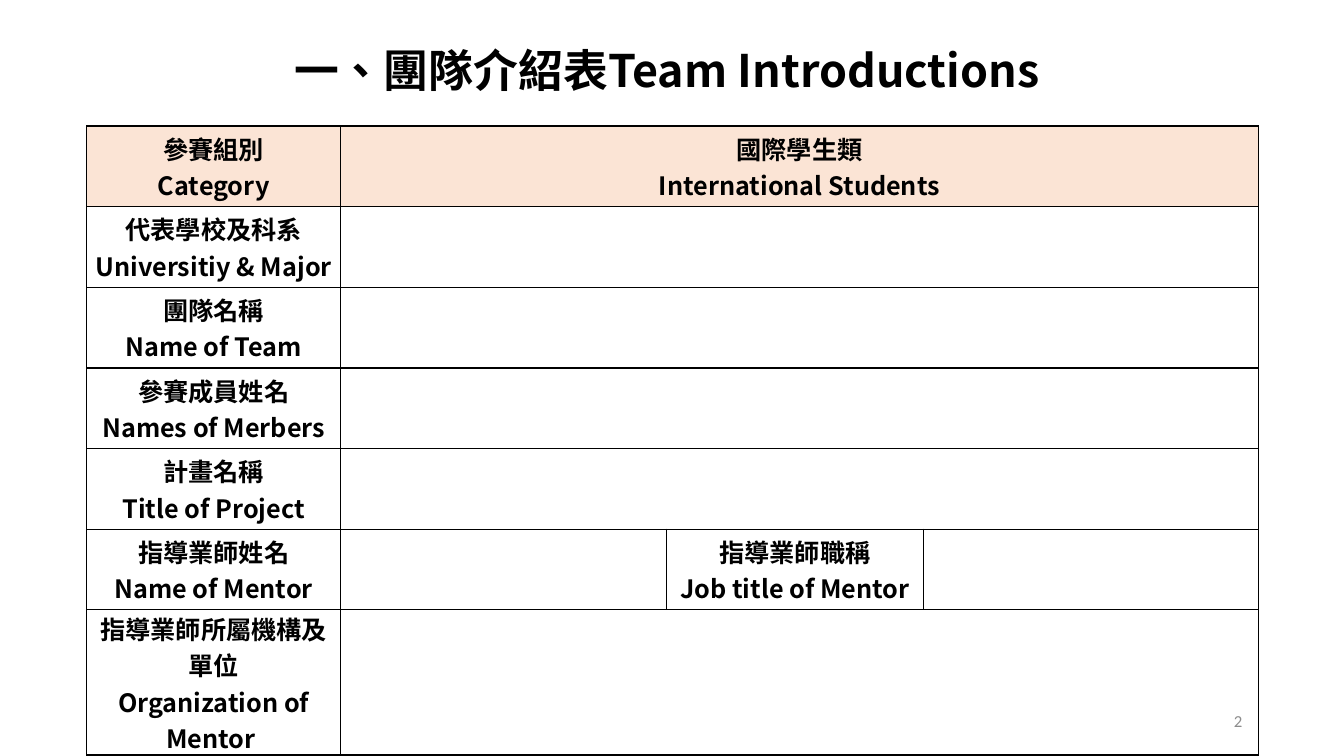
"""Build the team introduction table slide."""
from lxml import etree
from pptx import Presentation
from pptx.dml.color import RGBColor
from pptx.enum.text import MSO_ANCHOR, MSO_AUTO_SIZE, PP_ALIGN
from pptx.oxml.ns import qn
from pptx.util import Inches, Pt

CENTER, RIGHT = PP_ALIGN.CENTER, PP_ALIGN.RIGHT
MIDDLE = MSO_ANCHOR.MIDDLE
NO_AUTOFIT = MSO_AUTO_SIZE.NONE
BLACK = RGBColor(0x00, 0x00, 0x00)
GRAY = RGBColor(0x8C, 0x8C, 0x8C)
PEACH = RGBColor(0xFB, 0xE4, 0xD5)
HEADING_FONT = "Noto Sans CJK SC"
NUMBER_FONT = "Calibri"

COLUMN_WIDTHS = [2.52, 3.23, 2.55, 3.32]
ROW_HEIGHTS = [0.8] * 6 + [1.44]
MENTOR_ROW = 5
ROW_LABELS = [
    ("參賽組別", "Category"),
    ("代表學校及科系", "Universitiy & Major"),
    ("團隊名稱", "Name of Team"),
    ("參賽成員姓名", "Names of Merbers"),
    ("計畫名稱", "Title of Project"),
    ("指導業師姓名", "Name of Mentor"),
    ("指導業師所屬機構及單位", "Organization of Mentor "),
]
LABELS = {(row, 0): label for row, label in enumerate(ROW_LABELS)}
LABELS[0, 1] = ("國際學生類", "International Students")
LABELS[MENTOR_ROW, 2] = ("指導業師職稱", "Job title of Mentor")


def add_span(para, text, size, font=HEADING_FONT, color=BLACK, bold=True, align=CENTER):
    para.alignment = align
    span = para.add_run()
    span.text = text
    span.font.name = font
    span.font.size = Pt(size)
    span.font.bold = bold
    span.font.color.rgb = color
    properties = span.font._element
    properties.set("lang", "zh-TW")
    etree.SubElement(properties, qn("a:ea"), typeface=font)


def add_borders(cell):
    properties = cell._tc.get_or_add_tcPr()
    for side in ("lnL", "lnR", "lnT", "lnB"):
        line = etree.SubElement(properties, qn(f"a:{side}"), w=str(Pt(1)))
        fill = etree.SubElement(line, qn("a:solidFill"))
        etree.SubElement(fill, qn("a:srgbClr"), val=str(BLACK))


deck = Presentation()
deck.slide_width, deck.slide_height = Inches(13.33), Inches(7.5)
page = deck.slides.add_slide(deck.slide_layouts[5])

title = page.shapes.title
title.left, title.top = Inches(0.45), Inches(0)
title.width, title.height = Inches(12.43), Inches(1.84)
title_frame = title.text_frame
title_frame.auto_size = NO_AUTOFIT
title_frame.vertical_anchor = MIDDLE
title_frame.margin_bottom = Inches(0.57)
title_frame.paragraphs[0].line_spacing = 1.1
add_span(title_frame.paragraphs[0], "一、團隊介紹表Team Introductions ", 32)

number_box = page.shapes.add_textbox(Inches(9.42), Inches(6.95), Inches(3), Inches(0.4))
number_box.text_frame.word_wrap = True
number_box.text_frame.vertical_anchor = MIDDLE
add_span(number_box.text_frame.paragraphs[0], "2", 12, NUMBER_FONT, GRAY, False, RIGHT)

table = page.shapes.add_table(
    len(ROW_HEIGHTS), len(COLUMN_WIDTHS), Inches(0.86), Inches(1.25),
    Inches(sum(COLUMN_WIDTHS)), Inches(sum(ROW_HEIGHTS)),
).table
table.first_row = False
table.horz_banding = False
for column, width in zip(table.columns, COLUMN_WIDTHS):
    column.width = Inches(width)

for row_index, row in enumerate(table.rows):
    row.height = Inches(ROW_HEIGHTS[row_index])
    if row_index != MENTOR_ROW:
        table.cell(row_index, 1).merge(table.cell(row_index, 3))
    for column_index, cell in enumerate(row.cells):
        add_borders(cell)
        if row_index == 0:
            cell.fill.solid()
            cell.fill.fore_color.rgb = PEACH
        else:
            cell.fill.background()
        cell.vertical_anchor = MIDDLE
        cell.margin_left = cell.margin_right = Inches(0.02)
        cell.margin_top = cell.margin_bottom = Inches(0)
        if (row_index, column_index) in LABELS:
            chinese, english = LABELS[row_index, column_index]
            add_span(cell.text_frame.paragraphs[0], chinese, 18)
            add_span(cell.text_frame.add_paragraph(), english, 18)

deck.save("out.pptx")
